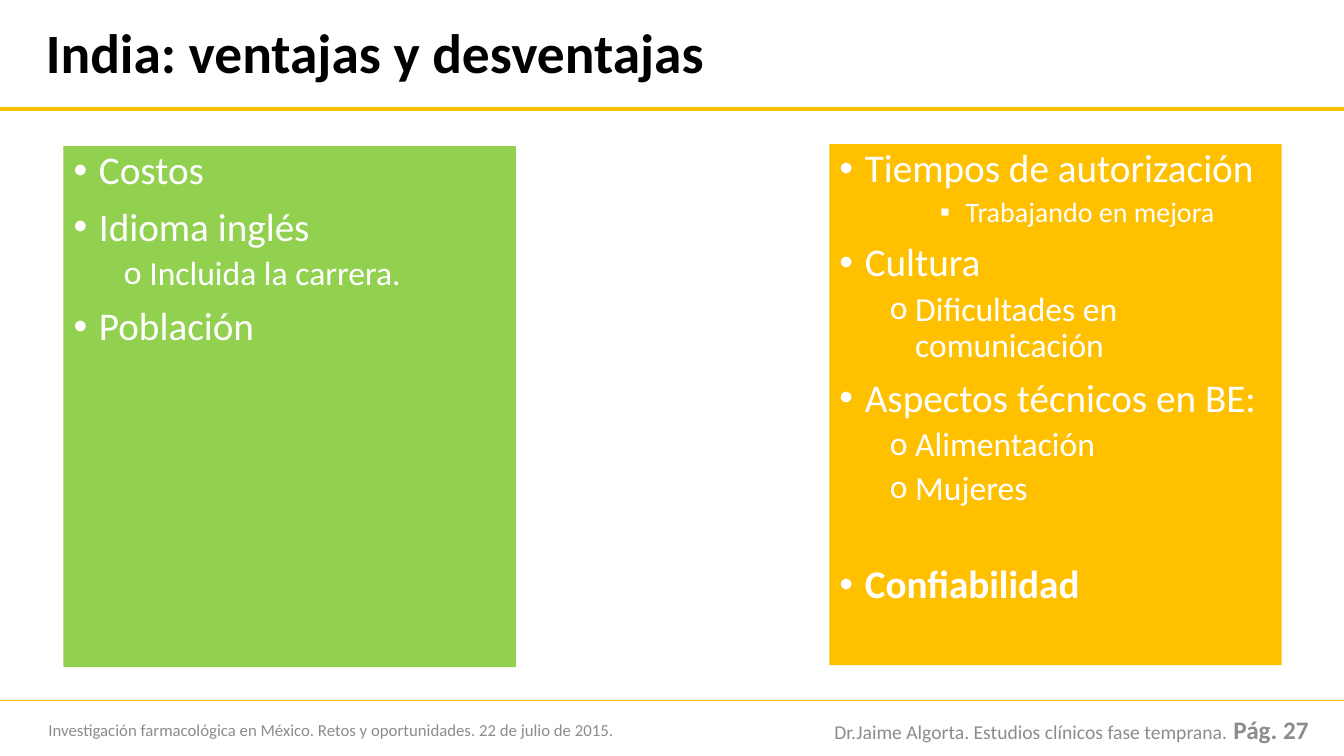
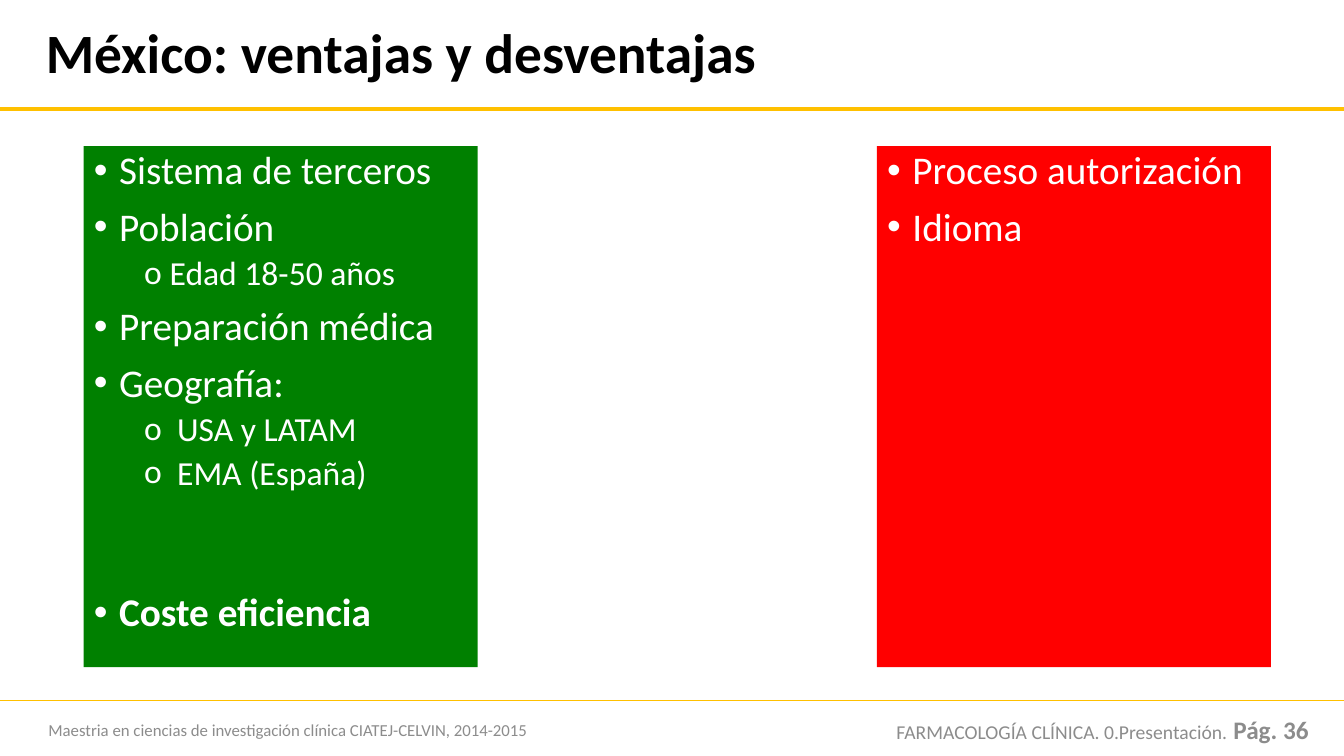
from dataclasses import dataclass

from lxml import etree
from pptx import Presentation
from pptx.dml.color import RGBColor
from pptx.enum.shapes import MSO_CONNECTOR
from pptx.enum.text import MSO_ANCHOR, MSO_AUTO_SIZE, PP_ALIGN
from pptx.oxml.ns import qn
from pptx.util import Cm, Pt

STRAIGHT = MSO_CONNECTOR.STRAIGHT
TOP, MIDDLE = MSO_ANCHOR.TOP, MSO_ANCHOR.MIDDLE
NO_AUTOFIT = MSO_AUTO_SIZE.NONE
LEFT, RIGHT = PP_ALIGN.LEFT, PP_ALIGN.RIGHT
TWO_CONTENT_LAYOUT = 3


@dataclass(frozen=True)
class Theme:
    font: str = "Calibri"
    black: str = "000000"
    white: str = "FFFFFF"
    gray: str = "8C8C8C"
    gold: str = "FFC000"
    lime: str = "92D050"
    green: str = "008000"
    red: str = "FF0000"
    title_size: float = 39.6
    event_size: int = 12
    author_size: int = 14
    page_size: int = 18
    line_spacing: float = 0.9
    blank_line: int = 31


@dataclass(frozen=True)
class Level:
    bullet: str
    bullet_font: str
    size: int
    margin: float
    space_before: int


@dataclass(frozen=True)
class Item:
    text: str
    level: int = 0
    bold: bool = False
    blank_lines: int = 0
    hanging: float = 0.64


@dataclass(frozen=True)
class Panel:
    left: float
    top: float
    width: float
    color: str
    items: tuple


@dataclass(frozen=True)
class Page:
    title: str
    event: str
    author: str
    number: int
    panels: tuple


THEME = Theme()
LEVELS = (
    Level("•", "Arial", 28, 0.64, 10),
    Level("o", "Calibri", 24, 1.91, 5),
    Level("▪", "Calibri", 20, 3.18, 5),
)
SLIDE_WIDTH, SLIDE_HEIGHT = 33.87, 19.05
PANEL_HEIGHT = 13.13
WIDE_HANGING = 0.83

PAGES = (
    Page(
        "India: ventajas y desventajas",
        "Investigación farmacológica en México. Retos y oportunidades. 22 de julio de 2015.",
        "Dr.Jaime Algorta. Estudios clínicos fase temprana.",
        27,
        (
            Panel(1.6, 3.68, 11.4, THEME.lime, (
                Item("Costos"),
                Item("Idioma inglés"),
                Item("Incluida la carrera.", 1),
                Item("Población"),
            )),
            Panel(20.9, 3.63, 11.4, THEME.gold, (
                Item("Tiempos de autorización"),
                Item("Trabajando en mejora", 2),
                Item("Cultura"),
                Item("Dificultades en comunicación", 1),
                Item("Aspectos técnicos en BE:"),
                Item("Alimentación", 1),
                Item("Mujeres", 1),
                Item("Confiabilidad", bold=True, blank_lines=1),
            )),
        ),
    ),
    Page(
        "México: ventajas y desventajas",
        "Maestria en ciencias de investigación clínica CIATEJ-CELVIN, 2014-2015",
        "FARMACOLOGÍA CLÍNICA. 0.Presentación.",
        36,
        (
            Panel(2.11, 3.68, 9.93, THEME.green, (
                Item("Sistema de terceros"),
                Item("Población"),
                Item("Edad 18-50 años", 1),
                Item("Preparación médica"),
                Item("Geografía:"),
                Item("USA y LATAM", 1, hanging=WIDE_HANGING),
                Item("EMA (España)", 1, hanging=WIDE_HANGING),
                Item("Coste eficiencia", bold=True, blank_lines=2),
            )),
            Panel(22.1, 3.68, 9.93, THEME.red, (
                Item("Proceso autorización"),
                Item("Idioma"),
            )),
        ),
    ),
)


def place(shape, left, top, width, height):
    shape.left, shape.top = Cm(left), Cm(top)
    shape.width, shape.height = Cm(width), Cm(height)


def prepare_frame(shape, anchor):
    frame = shape.text_frame
    frame.word_wrap = True
    frame.auto_size = NO_AUTOFIT
    frame.vertical_anchor = anchor
    return frame


def add_run(paragraph, text, size, color, bold=False):
    run = paragraph.add_run()
    run.text = text
    run.font.name = THEME.font
    run.font.size = Pt(size)
    run.font.bold = bold
    run.font.color.rgb = RGBColor.from_string(color)


def set_bullet(paragraph, level, hanging):
    properties = paragraph._p.get_or_add_pPr()
    # The bullet keeps its place when the hanging indent is wider
    margin = level.margin + hanging - Item.hanging
    properties.set("marL", str(Cm(margin)))
    properties.set("indent", str(-Cm(hanging)))
    etree.SubElement(properties, qn("a:buFont"), typeface=level.bullet_font)
    etree.SubElement(properties, qn("a:buChar"), char=level.bullet)


def add_rule(slide, top, weight):
    rule = slide.shapes.add_connector(STRAIGHT, 0, Cm(top), Cm(SLIDE_WIDTH), Cm(top))
    rule.line.color.rgb = RGBColor.from_string(THEME.gold)
    rule.line.width = Pt(weight)
    etree.SubElement(rule._element.spPr, qn("a:effectLst"))


def add_footer_box(slide, left, width, alignment):
    box = slide.shapes.add_textbox(Cm(left), Cm(17.86), Cm(width), Cm(1.04))
    paragraph = prepare_frame(box, MIDDLE).paragraphs[0]
    paragraph.alignment = alignment
    return paragraph


def add_frame(slide, page):
    # Rules across the slide
    add_rule(slide, 2.74, 3)
    add_rule(slide, 17.65, 1)

    # Title
    title = slide.shapes.title
    place(title, 0.9, 0.56, 32.33, 1.7)
    paragraph = prepare_frame(title, MIDDLE).paragraphs[0]
    paragraph.alignment = LEFT
    paragraph.line_spacing = THEME.line_spacing
    add_run(paragraph, page.title, THEME.title_size, THEME.black, True)

    # Footer
    event = add_footer_box(slide, 0.97, 16.46, LEFT)
    add_run(event, page.event, THEME.event_size, THEME.gray)
    author = add_footer_box(slide, 20.07, 13.16, RIGHT)
    add_run(author, page.author, THEME.author_size, THEME.gray)
    add_run(author, f" Pág. {page.number}", THEME.page_size, THEME.gray, True)


def fill_panel(placeholder, panel):
    place(placeholder, panel.left, panel.top, panel.width, PANEL_HEIGHT)
    placeholder.fill.solid()
    placeholder.fill.fore_color.rgb = RGBColor.from_string(panel.color)
    frame = prepare_frame(placeholder, TOP)
    for index, item in enumerate(panel.items):
        level = LEVELS[item.level]
        paragraph = frame.add_paragraph() if index else frame.paragraphs[0]
        paragraph.level = item.level
        set_bullet(paragraph, level, item.hanging)
        paragraph.line_spacing = THEME.line_spacing
        space = level.space_before + item.blank_lines * THEME.blank_line
        paragraph.space_before = Pt(space if index else 0)
        add_run(paragraph, item.text, level.size, THEME.white, item.bold)


def main():
    presentation = Presentation()
    presentation.slide_width = Cm(SLIDE_WIDTH)
    presentation.slide_height = Cm(SLIDE_HEIGHT)
    layout = presentation.slide_layouts[TWO_CONTENT_LAYOUT]
    for page in PAGES:
        slide = presentation.slides.add_slide(layout)
        add_frame(slide, page)
        for index, panel in enumerate(page.panels, start=1):
            fill_panel(slide.placeholders[index], panel)
    presentation.save("out.pptx")


if __name__ == "__main__":
    main()
